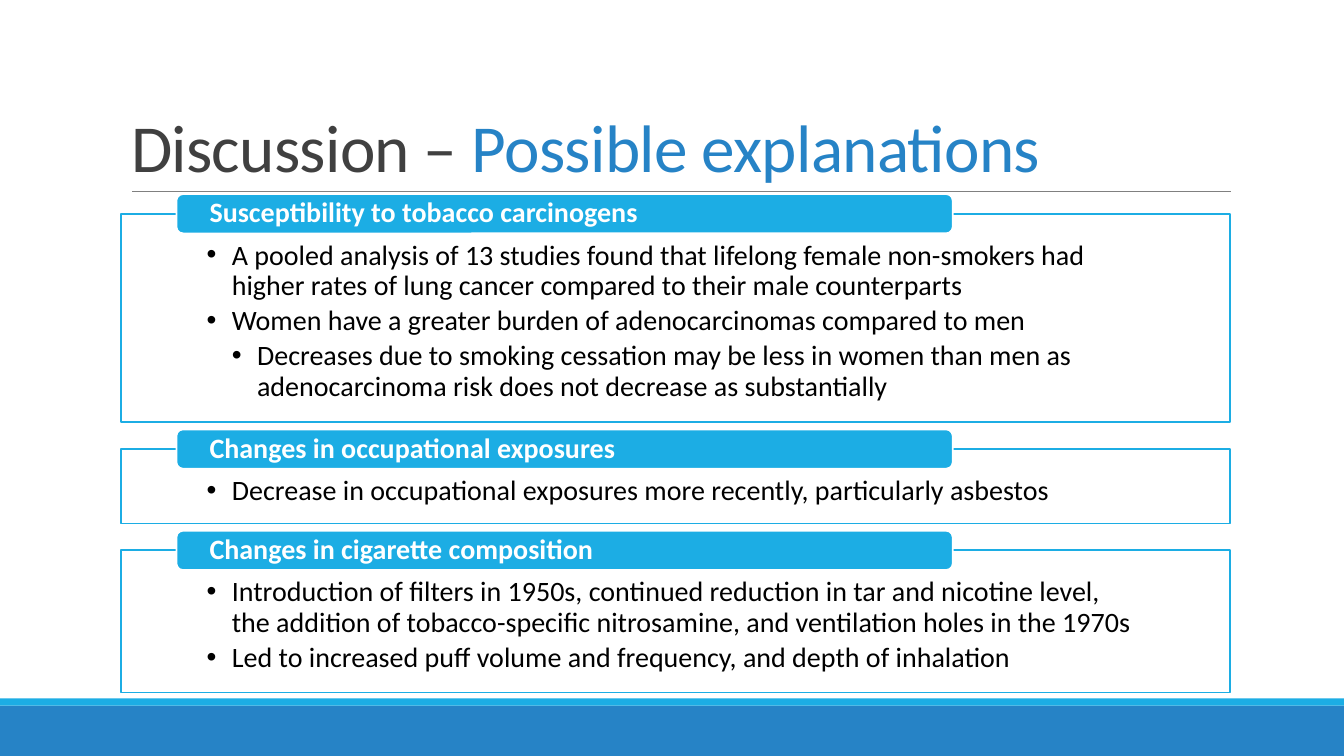
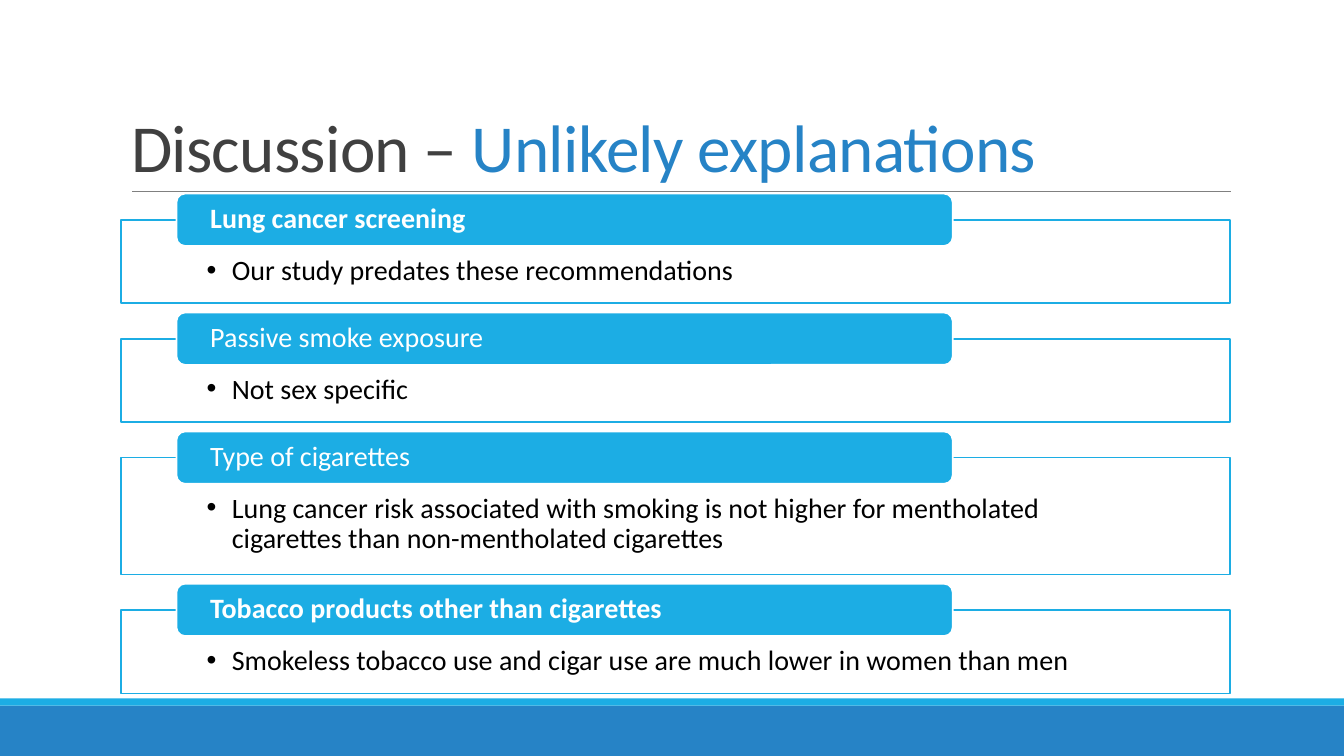
from dataclasses import dataclass

import lxml.etree
import pptx
import pptx.dml.color
import pptx.enum.shapes
import pptx.enum.text
import pptx.oxml.ns
import pptx.util

Inches = pptx.util.Inches
Pt = pptx.util.Pt
Shape = pptx.enum.shapes.MSO_SHAPE
Anchor = pptx.enum.text.MSO_ANCHOR
Align = pptx.enum.text.PP_ALIGN
qn = pptx.oxml.ns.qn


@dataclass(frozen=True)
class Theme:
    font: str = "Calibri"
    title_size: float = 48
    text_size: float = 20
    blue: str = "2683C6"
    cyan: str = "1CADE4"
    title_gray: str = "404040"
    rule_gray: str = "808080"
    black: str = "000000"
    white: str = "FFFFFF"
    border: float = 1.25
    rule: float = 0.5


THEME = Theme()
PANEL_LEFT, PANEL_WIDTH = 1.2, 11
TAB_LEFT, TAB_WIDTH = 1.75, 7.7
INDENT = 0.25

SLIDES = [
    {
        "topic": "Possible explanations",
        "top": 2.12, "tab_height": 0.39, "space": 0.07, "text_inset": 0.27,
        "panels": [
            ("Susceptibility to tobacco carcinogens", True, 2.07, [
                (1, "A pooled analysis of 13 studies found that lifelong female non-smokers had "
                    "higher rates of lung cancer compared to their male counterparts"),
                (1, "Women have a greater burden of adenocarcinomas compared to men"),
                (2, "Decreases due to smoking cessation may be less in women than men as "
                    "adenocarcinoma risk does not decrease as substantially"),
            ]),
            ("Changes in occupational exposures", True, 0.74, [
                (1, "Decrease in occupational exposures more recently, particularly asbestos"),
            ]),
            ("Changes in cigarette composition", True, 1.41, [
                (1, "Introduction of filters in 1950s, continued reduction in tar and nicotine level, "
                    "the addition of tobacco-specific nitrosamine, and ventilation holes in the 1970s"),
                (1, "Led to increased puff volume and frequency, and depth of inhalation"),
            ]),
        ],
    },
    {
        "topic": "Unlikely explanations",
        "top": 2.18, "tab_height": 0.52, "space": 0.09, "text_inset": 0.36,
        "panels": [
            ("Lung cancer screening", True, 0.83, [
                (1, "Our study predates these recommendations"),
            ]),
            ("Passive smoke exposure", False, 0.83, [
                (1, "Not sex specific"),
            ]),
            ("Type of cigarettes", False, 1.16, [
                (1, "Lung cancer risk associated with smoking is not higher for mentholated "
                    "cigarettes than non-mentholated cigarettes"),
            ]),
            ("Tobacco products other than cigarettes", True, 0.83, [
                (1, "Smokeless tobacco use and cigar use are much lower in women than men"),
            ]),
        ],
    },
]


def rgb(color):
    return pptx.dml.color.RGBColor.from_string(color)


def add_run(paragraph, text, size, color, bold=False):
    run = paragraph.add_run()
    run.text = text
    run.font.name = THEME.font
    run.font.size = Pt(size)
    run.font.bold = bold
    run.font.color.rgb = rgb(color)
    return run


def add_box(slide, kind, box, fill, line=None):
    shape = slide.shapes.add_shape(kind, *map(Inches, box))
    shape.shadow.inherit = False
    shape.fill.solid()
    shape.fill.fore_color.rgb = rgb(fill)
    if line:
        shape.line.color.rgb = rgb(line)
        shape.line.width = Pt(THEME.border)
    else:
        shape.line.fill.background()
    return shape


def set_frame(shape, anchor, left, top, right, bottom):
    frame = shape.text_frame
    frame.word_wrap = True
    frame.vertical_anchor = anchor
    frame.margin_left, frame.margin_top = Inches(left), Inches(top)
    frame.margin_right, frame.margin_bottom = Inches(right), Inches(bottom)
    return frame


def add_bullet(paragraph, level):
    properties = paragraph._p.get_or_add_pPr()
    properties.set("marL", str(Inches(INDENT * level)))
    properties.set("indent", str(-Inches(INDENT)))
    lxml.etree.SubElement(properties, qn("a:buFont")).set("typeface", "Arial")
    lxml.etree.SubElement(properties, qn("a:buChar")).set("char", "•")


def fill_frame(frame, items, color, bold=False, bulleted=False):
    for index, (level, text) in enumerate(items):
        paragraph = frame.paragraphs[0] if index == 0 else frame.add_paragraph()
        paragraph.alignment = Align.LEFT
        paragraph.line_spacing = 0.9
        if bulleted:
            paragraph.level = level
            paragraph.space_after = Pt(3.6)
            add_bullet(paragraph, level)
        add_run(paragraph, text, THEME.text_size, color, bold)


def furnish_layout(layout, slide):
    rule = slide.shapes.add_connector(
        pptx.enum.shapes.MSO_CONNECTOR.STRAIGHT,
        Inches(1.31), Inches(1.9), Inches(12.21), Inches(1.9))
    rule.line.color.rgb = rgb(THEME.rule_gray)
    rule.line.width = Pt(THEME.rule)
    lxml.etree.SubElement(rule._element.spPr, qn("a:effectLst"))
    footer = add_box(slide, Shape.RECTANGLE, (0, 7, 13.33, 0.5), THEME.blue)
    stripe = add_box(slide, Shape.RECTANGLE, (0, 6.93, 13.33, 0.07), THEME.cyan)
    for shape in (footer, stripe, rule):
        layout.shapes.element.append(shape.element)

    for placeholder in list(layout.placeholders):
        if placeholder.placeholder_format.idx:
            placeholder.element.getparent().remove(placeholder.element)
            continue
        placeholder.left, placeholder.top = Inches(1.2), Inches(0.31)
        placeholder.width, placeholder.height = Inches(11), Inches(1.59)
        placeholder.text_frame.vertical_anchor = Anchor.BOTTOM
        placeholder.text_frame.auto_size = pptx.enum.text.MSO_AUTO_SIZE.NONE


def write_title(slide, topic):
    paragraph = slide.shapes.title.text_frame.paragraphs[0]
    paragraph.alignment = Align.LEFT
    paragraph.line_spacing = 0.85
    for text, color in (("Discussion – ", THEME.title_gray), (topic, THEME.blue)):
        run = add_run(paragraph, text, THEME.title_size, color)
        run._r.get_or_add_rPr().set("spc", "-50")


def add_panels(slide, content):
    top, tab_height = content["top"], content["tab_height"]
    for heading, bold, height, bullets in content["panels"]:
        panel = add_box(slide, Shape.RECTANGLE, (PANEL_LEFT, top, PANEL_WIDTH, height),
                        THEME.white, THEME.cyan)
        frame = set_frame(panel, Anchor.TOP, 0.85, content["text_inset"], 0.85, 0.16)
        fill_frame(frame, bullets, THEME.black, bulleted=True)

        tab = add_box(slide, Shape.ROUNDED_RECTANGLE,
                      (TAB_LEFT, top - tab_height / 2, TAB_WIDTH, tab_height),
                      THEME.cyan, THEME.white)
        frame = set_frame(tab, Anchor.MIDDLE, 0.31, 0, 0.31, 0)
        fill_frame(frame, [(1, heading)], THEME.white, bold)
        top += height + content["space"] + tab_height / 2


def main():
    presentation = pptx.Presentation()
    presentation.slide_width = Inches(13.33)
    presentation.slide_height = Inches(7.5)
    layout = presentation.slide_layouts.get_by_name("Title Only")
    for index, content in enumerate(SLIDES):
        slide = presentation.slides.add_slide(layout)
        if index == 0:
            furnish_layout(layout, slide)
        write_title(slide, content["topic"])
        add_panels(slide, content)
    presentation.save("out.pptx")


if __name__ == "__main__":
    main()
